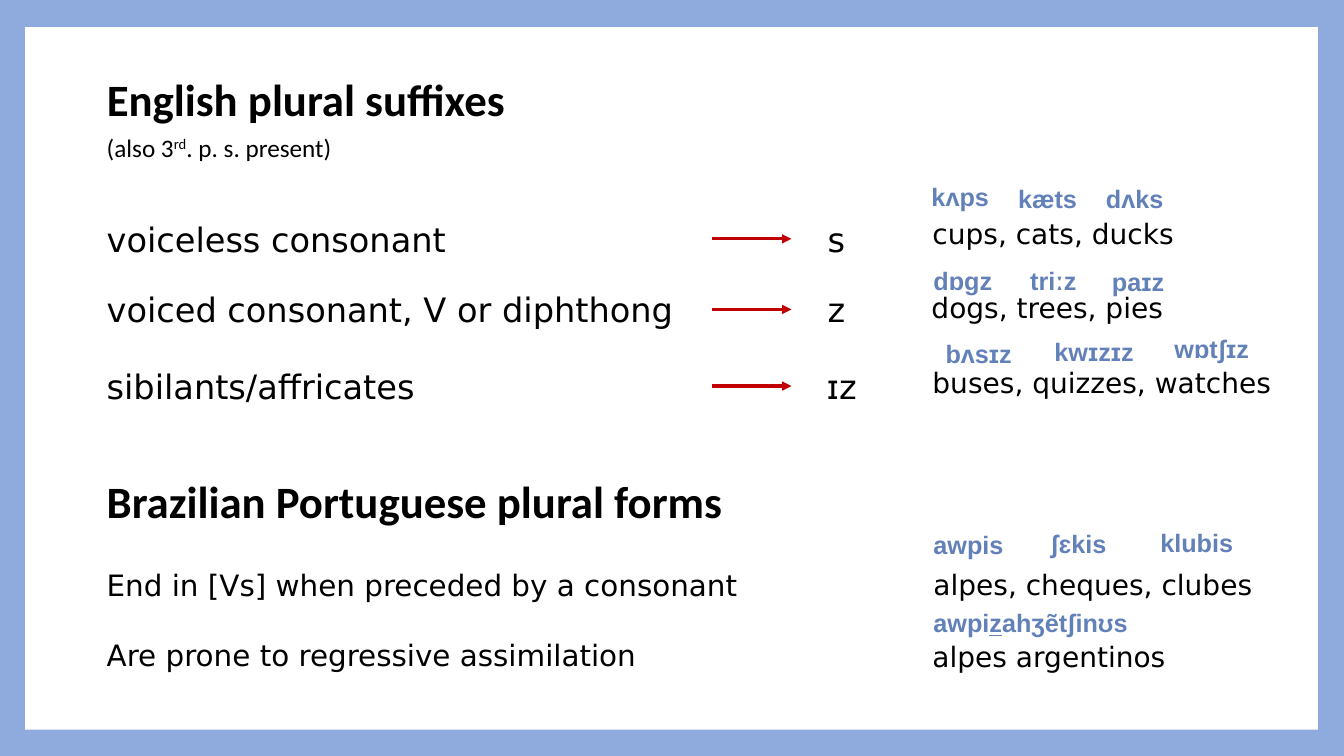
import pptx
import pptx.util
import pptx.dml.color
import pptx.enum.shapes
import pptx.enum.text
import pptx.oxml
import pptx.oxml.ns

# Content
HEADS = ["English plural suffixes", "Brazilian Portuguese plural forms"]
NOTE = ["(also 3", ("rd", "baseline", "30000"), ". p. s. present)"]
RULES = [
    # condition, suffix, suffix left, suffix width, top
    ("voiceless consonant", "s", 8.11, 0.45, 2.12),
    ("voiced consonant, V or diphthong", "z", 8.11, 0.45, 2.82),
    ("sibilants/affricates", "ɪz", 8.1, 0.71, 3.58),
]
FORMS = ["End in [Vs] when preceded by a consonant",
         "Are prone to regressive assimilation"]
WORDS = [
    # words, left, top, sounds as (text runs, left, top, width)
    ("cups, cats, ducks", 9.15, 2.1,
     [(["kʌps"], 9.14, 1.75, 0.78), (["kӕts"], 10, 1.77, 0.79),
      (["dʌks"], 10.87, 1.77, 0.78)]),
    ("dogs, trees, pies", 9.14, 2.83,
     [(["dɒɡz"], 9.16, 2.58, 0.79), (["triːz"], 10.12, 2.58, 0.66),
      (["paɪz"], 10.93, 2.59, 0.72)]),
    ("buses, quizzes, watches", 9.15, 3.58,
     [(["bʌsɪz"], 9.28, 3.31, 0.86), (["kwɪzɪz"], 10.36, 3.29, 0.99),
      (["wɒtʃɪz"], 11.55, 3.26, 0.95)]),
    ("alpes, cheques, clubes", 9.16, 5.58,
     [(["awpis"], 9.16, 5.2, 0.9), (["ʃɛkis"], 10.32, 5.19, 0.77),
      (["klubis"], 11.41, 5.18, 0.93)]),
    ("alpes argentinos", 9.15, 6.3,
     [(["awpi", ("z", "u", "sng"), "ahʒẽtʃinʊs"], 9.16, 5.98, 2.22)]),
]

# Grid and formats
WIDE, HIGH = 13.33, 7.5
LEFT, ARROW, REACH = 0.96, 7.06, 0.79
HEAD = {"name": "Calibri", "size": 32, "bold": True, "color": "000000"}
SMALL = {"name": "Calibri", "size": 18, "color": "000000"}
RULE = {"name": "DejaVu Sans", "size": 24, "color": "000000"}
FORM = {**RULE, "size": 21}
WORD = {**RULE, "size": 20}
SOUND = {"name": "Arial", "size": 18, "bold": True, "color": "6381B9"}

inch = pptx.util.Inches
MIDDLE = pptx.enum.text.MSO_ANCHOR.MIDDLE


def paint(text):
    return pptx.dml.color.RGBColor.from_string(text)


def style(font, look):
    for key, value in look.items():
        if key == "color":
            font.color.rgb = paint(value)
        else:
            setattr(font, key, pptx.util.Pt(value) if key == "size" else value)


def place(shape, left, top, width, height):
    for key, value in zip(("left", "top", "width", "height"),
                          (left, top, width, height)):
        setattr(shape, key, inch(value))


def write(para, runs, look):
    for part in runs:
        text, *mark = (part,) if isinstance(part, str) else part
        run = para.add_run()
        run.text = text
        style(run.font, look)
        if mark:
            run.font._element.set(*mark)
    para.alignment = pptx.enum.text.PP_ALIGN.LEFT


def label(runs, left, top, width, height, look, wrap=True):
    box = slide.shapes.add_textbox(0, 0, 0, 0)
    place(box, left, top, width, height)
    box.text_frame.word_wrap = wrap
    write(box.text_frame.paragraphs[0], runs, look)
    return box


def arrow(left, top, right):
    line = slide.shapes.add_connector(
        pptx.enum.shapes.MSO_CONNECTOR.STRAIGHT,
        inch(left), inch(top), inch(right), inch(top))
    line.line.color.rgb = paint("C00000")
    line.line.width = pptx.util.Pt(2.25)
    space = pptx.oxml.ns.nsdecls("a")
    line.line._get_or_add_ln().append(
        pptx.oxml.parse_xml(f'<a:tailEnd {space} type="triangle"/>'))
    line.element.spPr.append(pptx.oxml.parse_xml(f"<a:effectLst {space}/>"))


deck = pptx.Presentation()
deck.slide_width, deck.slide_height = inch(WIDE), inch(HIGH)
slide = deck.slides.add_slide(deck.slide_layouts[5])

# Frame and white panel
slide.background.fill.solid()
slide.background.fill.fore_color.rgb = paint("8FAADC")
panel = slide.shapes.add_shape(
    pptx.enum.shapes.MSO_SHAPE.RECTANGLE, 0, 0, 0, 0)
place(panel, 0.25, 0.27, 12.82, 6.97)
panel.fill.solid()
panel.fill.fore_color.rgb = paint("FFFFFF")
panel.line.fill.background()
panel.shadow.inherit = False

# Headings
title = slide.shapes.title
title.element.addprevious(panel.element)
place(title, LEFT, 0.31, 6.21, 1.4)
write(title.text_frame.paragraphs[0], HEADS[:1], HEAD)
second = label(HEADS[1:], LEFT, 4.3, 9.9, 1.4, HEAD)
for head in (title, second):
    head.text_frame.vertical_anchor = MIDDLE
    head.text_frame.paragraphs[0].line_spacing = 0.9
label(NOTE, LEFT, 1.26, 2.82, 0.4, SMALL)

# English rules
for case, suffix, left, width, top in RULES:
    label([case], LEFT, top, 6.6, 0.5, RULE)
    arrow(ARROW, top + 0.25, ARROW + REACH)
    label([suffix], left, top, width, 0.5, RULE)

# Portuguese rules
forms = label(FORMS[:1], LEFT, 5.58, 7.8, 1.16, FORM).text_frame
last = forms.add_paragraph()
last.space_before = pptx.util.Pt(24.5)
write(last, FORMS[1:], FORM)

# Examples with their sounds
for words, left, top, sounds in WORDS:
    label([words], left, top, WIDE - left, 0.44, WORD)
    for runs, *spot in sounds:
        label(runs, *spot, 0.4, SOUND, wrap=False)

deck.save("out.pptx")
